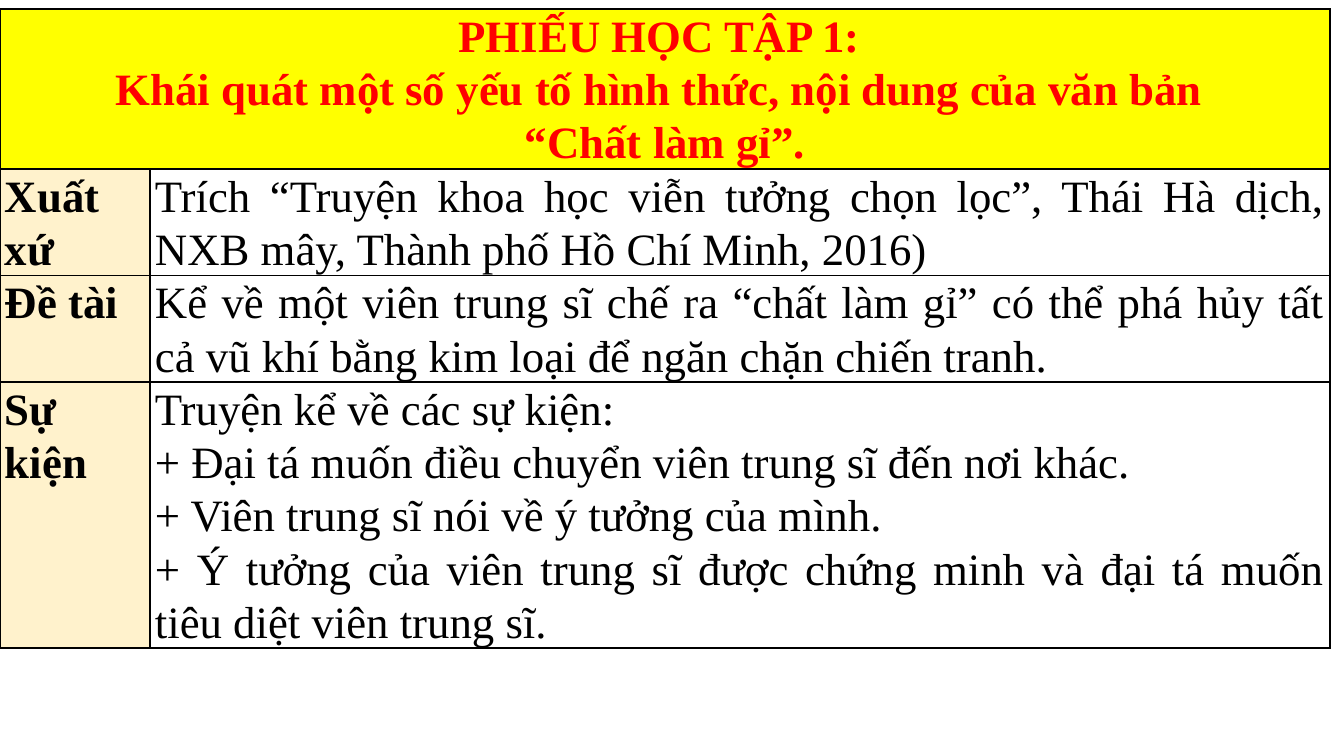
from lxml import etree
from pptx import Presentation
from pptx.dml.color import RGBColor
from pptx.enum.text import PP_ALIGN
from pptx.oxml.ns import qn
from pptx.util import Emu, Pt

CENTER, JUSTIFY = PP_ALIGN.CENTER, PP_ALIGN.JUSTIFY
FONT, SIZE, SPACING = "Times New Roman", 32, 1.07
RED, BLACK, WHITE, YELLOW, CREAM = "FF0000", "000000", "FFFFFF", "FFFF00", "FFF2CC"

HEADING = [
    "PHIẾU HỌC TẬP 1: ",
    "Khái quát một số yếu tố hình thức, nội dung của văn bản ",
    "“Chất làm gỉ”.",
]
ENTRIES = [
    ("Xuất xứ", ["Trích “Truyện khoa học viễn tưởng chọn lọc”, Thái Hà dịch, "
                 "NXB mây, Thành phố Hồ Chí Minh, 2016)"]),
    ("Đề tài", ["Kể về một viên trung sĩ chế ra “chất làm gỉ” có thể phá hủy tất "
                "cả vũ khí bằng kim loại để ngăn chặn chiến tranh."]),
    ("Sự kiện", [
        "Truyện kể về các sự kiện:",
        "+ Đại tá muốn điều chuyển viên trung sĩ đến nơi khác.",
        "+ Viên trung sĩ nói về ý tưởng của mình.",
        "+ Ý tưởng của viên trung sĩ được chứng minh và đại tá muốn "
        "tiêu diệt viên trung sĩ.",
    ]),
]
SLIDE_SIZE = (1344, 756)
TABLE_TOP = 9
COLUMNS = (150, 1180)
ROWS = (160, 106, 106, 266)
INSET = 5


def px(n):
    return Emu(round(n * 914400 / 100.8))


def color(hex_string):
    return RGBColor.from_string(hex_string)


def add_borders(cell):
    """Draw a 1 pt black line on all four sides, ahead of the cell's fill."""
    tc_pr = cell._tc.get_or_add_tcPr()
    for i, side in enumerate(("a:lnL", "a:lnR", "a:lnT", "a:lnB")):
        ln = etree.Element(qn(side), w=str(Pt(1)))
        fill = etree.SubElement(ln, qn("a:solidFill"))
        etree.SubElement(fill, qn("a:srgbClr"), val=BLACK)
        tc_pr.insert(i, ln)


def fill_cell(cell, lines, fill, align=JUSTIFY, font_color=BLACK, bold=False):
    cell.fill.solid()
    cell.fill.fore_color.rgb = color(fill)
    cell.margin_left = cell.margin_right = px(INSET)
    cell.margin_top = cell.margin_bottom = 0
    tf = cell.text_frame
    tf.text = "\n".join(lines)
    for p in tf.paragraphs:
        p.alignment = align
        p.line_spacing = SPACING
        p.font.name = FONT
        p.font.size = Pt(SIZE)
        p.font.bold = bold
        p.font.color.rgb = color(font_color)


prs = Presentation()
prs.slide_width, prs.slide_height = map(px, SLIDE_SIZE)
s = prs.slides.add_slide(prs.slide_layouts[6])

table = s.shapes.add_table(len(ROWS), len(COLUMNS), 0, px(TABLE_TOP),
                           px(sum(COLUMNS)), px(sum(ROWS))).table
table.first_row = table.horz_banding = False
for column, width in zip(table.columns, COLUMNS):
    column.width = px(width)
for row, height in zip(table.rows, ROWS):
    row.height = px(height)

table.cell(0, 0).merge(table.cell(0, 1))
fill_cell(table.cell(0, 0), HEADING, YELLOW, CENTER, RED, bold=True)
for i, (label, lines) in enumerate(ENTRIES, start=1):
    fill_cell(table.cell(i, 0), [label], CREAM, bold=True)
    fill_cell(table.cell(i, 1), lines, WHITE)
for cell in table.iter_cells():
    add_borders(cell)

prs.save("out.pptx")
